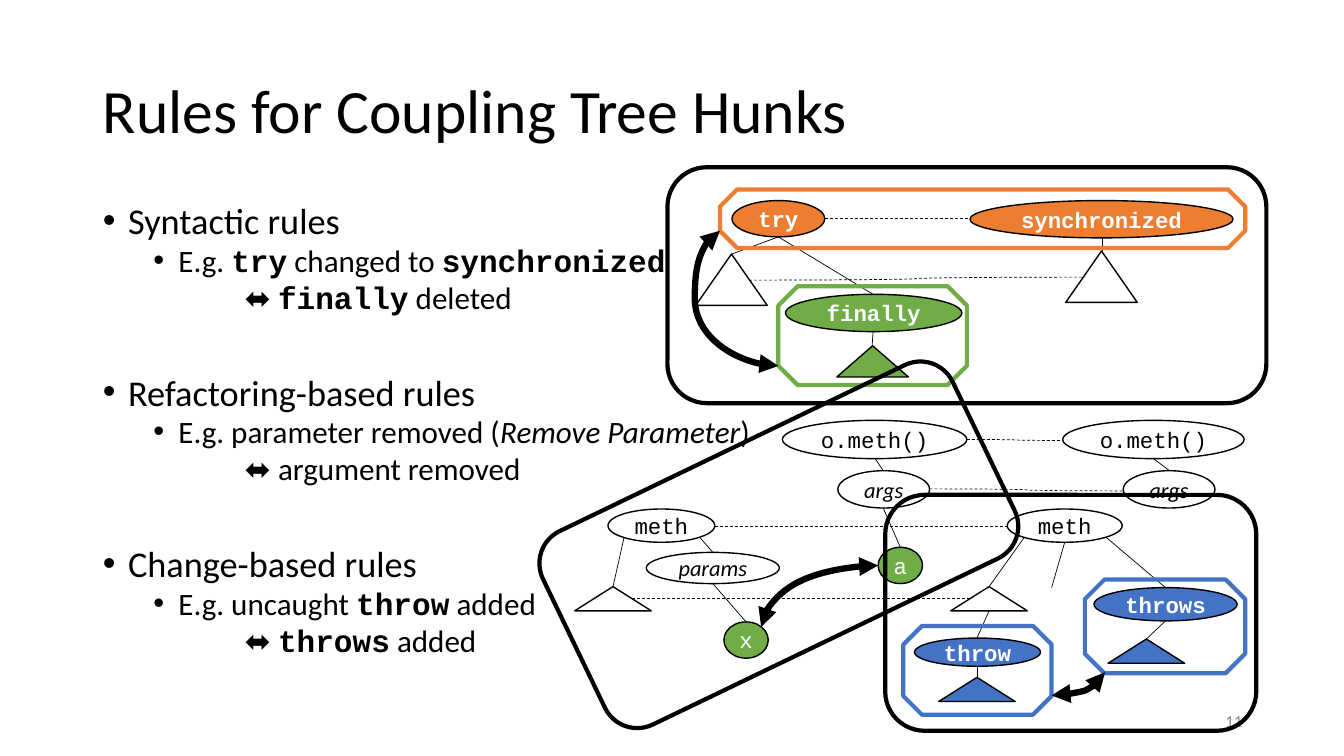
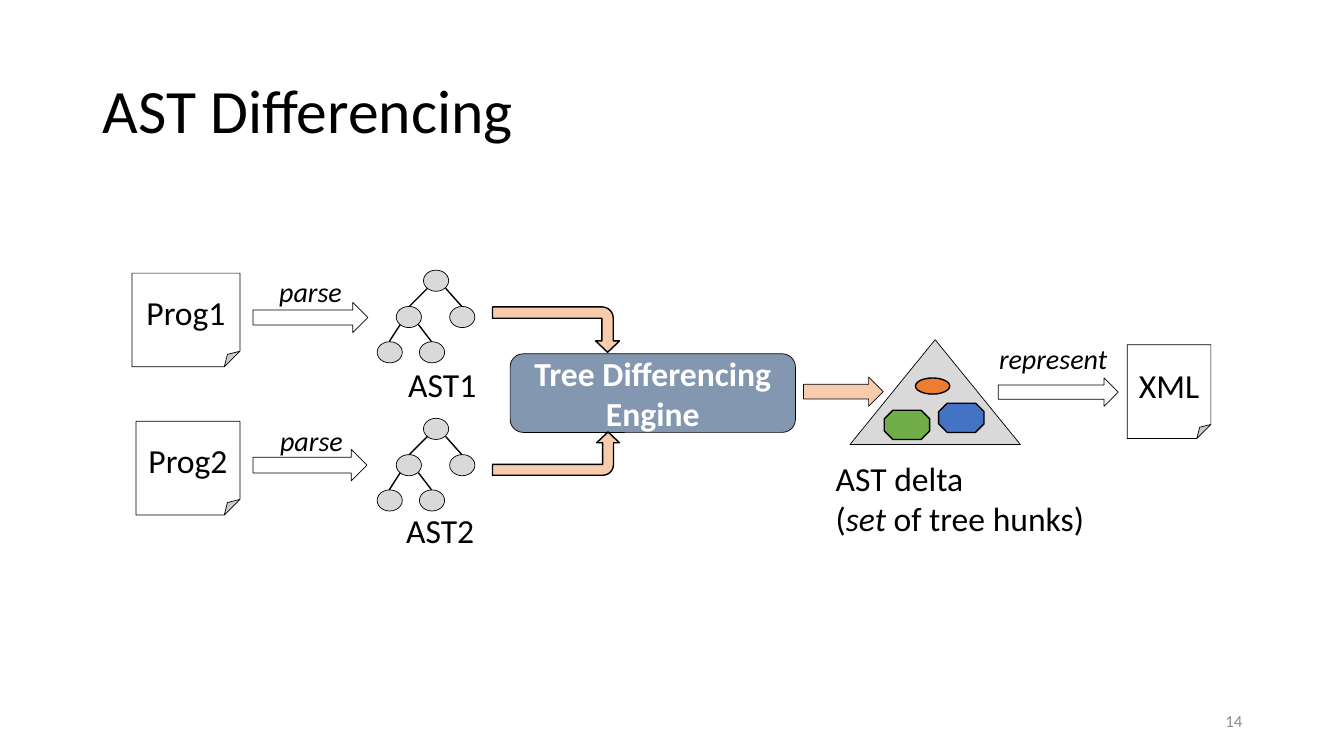
from dataclasses import dataclass

from lxml import etree
from pptx import Presentation
from pptx.dml.color import RGBColor
from pptx.enum.dml import MSO_LINE
from pptx.enum.shapes import MSO_CONNECTOR, MSO_SHAPE
from pptx.enum.text import MSO_ANCHOR, MSO_AUTO_SIZE, PP_ALIGN
from pptx.oxml.ns import qn
from pptx.util import Inches, Pt

ELLIPSE = MSO_SHAPE.OVAL
TRIANGLE = MSO_SHAPE.ISOSCELES_TRIANGLE
OCTAGON = MSO_SHAPE.OCTAGON
ROUNDED = MSO_SHAPE.ROUNDED_RECTANGLE
DOCUMENT = MSO_SHAPE.FOLDED_CORNER
ARROW = MSO_SHAPE.RIGHT_ARROW
BENT_ARROW = MSO_SHAPE.BENT_ARROW
STRAIGHT, CURVE = MSO_CONNECTOR.STRAIGHT, MSO_CONNECTOR.CURVE
DASH = MSO_LINE.DASH
LEFT, CENTER, RIGHT = PP_ALIGN.LEFT, PP_ALIGN.CENTER, PP_ALIGN.RIGHT
TOP, MIDDLE = MSO_ANCHOR.TOP, MSO_ANCHOR.MIDDLE
NO_AUTOFIT = MSO_AUTO_SIZE.NONE


@dataclass(frozen=True)
class Theme:
    """Colours, fonts, type sizes and line widths of the deck."""

    black: str = "000000"
    white: str = "FFFFFF"
    muted: str = "8C8C8C"
    orange: str = "ED7D31"
    green: str = "70AD47"
    blue: str = "4472C4"
    grey: str = "D9D9D9"
    slate: str = "8497B0"
    peach: str = "F8CBAD"
    sans: str = "Calibri"
    mono: str = "Courier New"
    title: float = 44
    item: float = 25.9
    subitem: float = 22.2
    label: float = 24
    caption: float = 20
    node: float = 16
    number: float = 12
    hair: float = 0.5
    thin: float = 1
    frame: float = 3
    heavy: float = 4.5


THEME = Theme()
CODE = {"font": THEME.mono, "bold": True}
ITALIC = {"italic": True}
KEYWORD = {**CODE, "color": THEME.white}
MONO = {"font": THEME.mono}
VARIABLE = {"font": THEME.mono, "color": THEME.white}

RULES = [
    ("Syntactic rules",
     ["E.g. ", ("try", CODE), " changed to ", ("synchronized", CODE)],
     ["⬌ ", ("finally", CODE), " deleted"]),
    ("Refactoring-based rules",
     ["E.g. parameter removed (", ("Remove Parameter", ITALIC), ")"],
     ["⬌ argument removed"]),
    ("Change-based rules",
     ["E.g. uncaught ", ("throw", CODE), " added"],
     ["⬌ ", ("throws", CODE), " added"]),
]
NODES = [
    ("try", (7.26, 1.99, 0.92, 0.36), THEME.orange, KEYWORD),
    ("synchronized", (9.62, 1.99, 2.61, 0.37), THEME.orange, KEYWORD),
    ("finally", (7.79, 2.92, 1.75, 0.37), THEME.green, KEYWORD),
    ("throws", (10.85, 5.83, 1.42, 0.33), THEME.blue, KEYWORD),
    ("throw", (9.07, 6.33, 1.25, 0.28), THEME.blue, KEYWORD),
    ("meth", (9.99, 5.05, 1.14, 0.33), THEME.white, MONO),
    ("meth", (6.03, 5.05, 1.06, 0.33), THEME.white, MONO),
    ("o.meth()", (10.54, 4.17, 1.8, 0.38), THEME.white, MONO),
    ("o.meth()", (7.76, 4.17, 1.83, 0.38), THEME.white, MONO),
    ("args", (8.31, 4.67, 0.91, 0.37), THEME.white, ITALIC),
    ("args", (11.14, 4.67, 0.91, 0.37), THEME.white, ITALIC),
    ("params", (6.41, 5.48, 1.32, 0.31), THEME.white, ITALIC),
]
SUBTREES = [
    ((6.9, 2.52, 0.71, 0.51), THEME.white),
    ((10.57, 2.49, 0.71, 0.51), THEME.white),
    ((8.3, 3.43, 0.71, 0.31), THEME.green),
    ((9.43, 5.82, 0.76, 0.24), THEME.white),
    ((5.7, 5.82, 0.76, 0.24), THEME.white),
    ((10.99, 6.34, 0.76, 0.24), THEME.blue),
    ((9.31, 6.72, 0.76, 0.24), THEME.blue),
]
EDGES = [
    (7.26, 2.52, 7.72, 2.35), (10.93, 2.49, 10.93, 2.36),
    (8.65, 3.43, 8.66, 3.28), (7.72, 2.35, 8.66, 2.92),
    (9.81, 5.82, 10.16, 5.33), (10.97, 5.33, 11.56, 5.83),
    (9.69, 6.33, 9.81, 6.06), (11.37, 6.34, 11.56, 6.16),
    (9.69, 6.72, 9.69, 6.62), (6.08, 5.82, 6.19, 5.33),
    (7.07, 5.48, 6.94, 5.33), (8.76, 4.67, 8.68, 4.55),
    (8.93, 5.43, 8.76, 5.04), (7.4, 6.17, 7.07, 5.79),
    (10.56, 5.38, 10.43, 5.83), (11.44, 4.55, 11.6, 4.67),
]
MATCHES = [
    (8.18, 2.17, 9.62, 2.17), (7.43, 2.78, 10.75, 2.75),
    (7.09, 5.22, 9.99, 5.22), (6.27, 5.94, 9.62, 5.94),
    (9.59, 4.36, 10.54, 4.37), (9.22, 4.85, 11.14, 4.87),
]
TREE_NODES = [(0.46, 0), (0.19, 0.36), (0.72, 0.36), (0, 0.71), (0.42, 0.71)]
TREE_EDGES = [
    (0.5, 0.18, 0.32, 0.36), (0.23, 0.54, 0.12, 0.71),
    (0.68, 0.18, 0.84, 0.36), (0.41, 0.54, 0.54, 0.71),
]


def inches(values):
    """Turn plain numbers into lengths."""
    return [Inches(value) for value in values]


def add_span(para, text, size=THEME.label, font=THEME.sans, color=THEME.black,
             bold=False, italic=False):
    """Add one formatted piece of text to a paragraph."""
    span = para.add_run()
    span.text = text
    span.font.size = Pt(size)
    span.font.name = font
    span.font.color.rgb = RGBColor.from_string(color)
    span.font.bold = bold
    span.font.italic = italic


def add_spans(para, pieces, **style):
    """Add plain strings and (text, style) pairs to a paragraph."""
    for piece in pieces:
        text, changes = (piece, {}) if isinstance(piece, str) else piece
        add_span(para, text, **{**style, **changes})


def write(box, lines, align=LEFT, anchor=TOP, wrap=False, **style):
    """Fill a box with one paragraph for each list of pieces."""
    frame = box.text_frame
    frame.word_wrap = wrap
    frame.auto_size = NO_AUTOFIT
    frame.vertical_anchor = anchor
    for index, pieces in enumerate(lines):
        para = frame.paragraphs[0] if index == 0 else frame.add_paragraph()
        para.alignment = align
        add_spans(para, pieces, **style)


def place(box, at):
    """Move a placeholder to its position and size."""
    box.left, box.top, box.width, box.height = inches(at)


def add_label(page, lines, at, **style):
    """Add a text box."""
    write(page.shapes.add_textbox(*inches(at)), lines, **style)


def add_figure(page, kind, at, fill=None, line=THEME.black, weight=THEME.thin,
               adjust=(), rotation=0, flip=False):
    """Add a preset shape, unfilled unless a fill is given."""
    shape = page.shapes.add_shape(kind, *inches(at))
    shape.shadow.inherit = False
    if fill:
        shape.fill.solid()
        shape.fill.fore_color.rgb = RGBColor.from_string(fill)
    else:
        shape.fill.background()
    shape.line.color.rgb = RGBColor.from_string(line)
    shape.line.width = Pt(weight)
    for index, value in enumerate(adjust):
        shape.adjustments[index] = value
    shape.rotation = rotation
    if flip:
        shape.element.spPr.xfrm.set("flipH", "1")
    return shape


def add_node(page, text, at, fill, style):
    """Add a labelled ellipse of a syntax tree."""
    node = add_figure(page, ELLIPSE, at, fill)
    write(node, [[text]], CENTER, MIDDLE, size=THEME.node, **style)
    return node


def add_line(page, ends, kind=STRAIGHT, weight=THEME.hair, dash=None):
    """Add a black connector between two points."""
    line = page.shapes.add_connector(kind, *inches(ends))
    line.line.color.rgb = RGBColor.from_string(THEME.black)
    line.line.width = Pt(weight)
    if dash:
        line.line.dash_style = dash
    etree.SubElement(line.element.spPr, qn("a:effectLst"))
    return line


def add_coupling(page, ends, start, finish, preset, bend=None):
    """Add a heavy two-headed curve glued to (shape, site) pairs."""
    curve = add_line(page, ends, CURVE, THEME.heavy)
    properties = curve.element.spPr
    for tag in ("a:headEnd", "a:tailEnd"):
        etree.SubElement(properties.find(qn("a:ln")), qn(tag), type="triangle")
    geometry = properties.find(qn("a:prstGeom"))
    geometry.set("prst", preset)
    if bend:
        etree.SubElement(geometry.find(qn("a:avLst")), qn("a:gd"),
                         name="adj1", fmla=f"val {bend}")
    joints = curve.element.nvCxnSpPr.cNvCxnSpPr
    for tag, (shape, site) in (("a:stCxn", start), ("a:endCxn", finish)):
        etree.SubElement(joints, qn(tag), id=str(shape.shape_id), idx=str(site))


def add_item(para, pieces, margin, size, before, bullet=True):
    """Format one paragraph of the rules list."""
    properties = para._p.get_or_add_pPr()
    properties.set("marL", str(Inches(margin)))
    properties.set("indent", str(Inches(-0.25 if bullet else 0)))
    if bullet:
        etree.SubElement(properties, qn("a:buFont"), typeface="Arial")
        etree.SubElement(properties, qn("a:buChar"), char="•")
    else:
        etree.SubElement(properties, qn("a:buNone"))
    para.line_spacing = 0.8
    para.space_before = Pt(before)
    add_spans(para, pieces, size=size)


def add_rules(body):
    """Fill the body placeholder with the three kinds of rules."""
    place(body, (0.92, 2, 11.5, 4.76))
    frame = body.text_frame
    frame.auto_size = NO_AUTOFIT
    for index, (heading, example, effect) in enumerate(RULES):
        para = frame.add_paragraph() if index else frame.paragraphs[0]
        add_item(para, [heading], 0.25, THEME.item, 45 if index else 0)
        for pieces, margin, bullet in ((example, 0.75, True), (effect, 1.41, False)):
            para = frame.add_paragraph()
            para.level = 1
            add_item(para, pieces, margin, THEME.subitem, 5, bullet)


def add_page(deck, layout, title, number):
    """Add a slide with its title and page number."""
    page = deck.slides.add_slide(deck.slide_layouts.get_by_name(layout))
    heading = page.shapes.title
    place(heading, (0.92, 0.4, 11.5, 1.45))
    write(heading, [[title]], anchor=MIDDLE, wrap=True, size=THEME.title)
    heading.text_frame.paragraphs[0].line_spacing = 0.9
    add_label(page, [[number]], (9.42, 6.95, 3, 0.4), align=RIGHT, anchor=MIDDLE,
              wrap=True, size=THEME.number, color=THEME.muted)
    return page


def add_hunk(page, at, color, adjust=()):
    """Add the coloured octagon around a tree hunk."""
    return add_figure(page, OCTAGON, at, line=color, weight=THEME.frame, adjust=adjust)


def build_rules(deck):
    """Build the slide on coupling rules."""
    page = add_page(deck, "Title and Content", "Rules for Coupling Tree Hunks", "11")
    add_rules(page.placeholders[1])
    for node in NODES:
        add_node(page, *node)
    parameter = add_node(page, "x", (7.18, 6.17, 0.44, 0.36), THEME.green, VARIABLE)
    argument = add_node(page, "a", (8.71, 5.43, 0.44, 0.36), THEME.green, VARIABLE)
    for at, fill in SUBTREES:
        add_figure(page, TRIANGLE, at, fill)
    for ends in EDGES:
        add_line(page, ends)
    for ends in MATCHES:
        add_line(page, ends, CURVE, dash=DASH)
    deleted = add_hunk(page, (7.72, 2.84, 1.87, 0.98), THEME.green, [0.195])
    changed = add_hunk(page, (7.14, 1.88, 5.21, 0.58), THEME.orange)
    declared = add_hunk(page, (10.76, 5.75, 1.59, 0.93), THEME.blue, [0.209])
    thrown = add_hunk(page, (8.96, 6.21, 1.47, 0.88), THEME.blue, [0.209])
    add_coupling(page, (7.72, 3.63, 7.14, 2.29), (deleted, 4), (changed, 4),
                 "curvedConnector3", 143000)
    add_coupling(page, (10.43, 6.9, 10.96, 6.67), (thrown, 1), (declared, 3),
                 "curvedConnector2")
    add_coupling(page, (8.71, 5.61, 7.55, 6.22), (argument, 2), (parameter, 7),
                 "curvedConnector2")
    for at, rotation in (((6.62, 1.66, 5.94, 2.34), 0),
                         ((5.47, 4.34, 4.51, 2.13), 334.3),
                         ((8.78, 4.91, 3.68, 2.34), 0)):
        add_figure(page, ROUNDED, at, weight=THEME.frame, rotation=rotation)


def add_tree(page, left, top):
    """Add a small syntax tree."""
    for x, y in TREE_NODES:
        add_figure(page, ELLIPSE, (left + x, top + y, 0.25, 0.21), THEME.grey,
                   weight=THEME.hair)
    for x1, y1, x2, y2 in TREE_EDGES:
        add_line(page, (left + x1, top + y1, left + x2, top + y2), weight=THEME.thin)


def build_differencing(deck):
    """Build the slide on the differencing pipeline."""
    page = add_page(deck, "Title Only", "AST Differencing", "14")
    for text, at in (("Prog1", (1.31, 2.71, 1.07, 0.93)),
                     ("Prog2", (1.35, 4.18, 1.03, 0.93)),
                     ("XML", (11.18, 3.42, 0.83, 0.93))):
        document = add_figure(page, DOCUMENT, at, THEME.white, weight=THEME.hair)
        write(document, [[text]], CENTER, MIDDLE)
    engine = add_figure(page, ROUNDED, (5.06, 3.51, 2.83, 0.78), THEME.slate,
                        weight=THEME.hair)
    write(engine, [["Tree Differencing"], ["Engine"]], CENTER, MIDDLE,
          color=THEME.white, bold=True)
    for top in (2.68, 4.15):
        add_tree(page, 3.74, top)
    for at, flip in (((5.29, 2.64, 0.45, 1.26), False), ((5.3, 3.87, 0.43, 1.26), True)):
        add_figure(page, BENT_ARROW, at, THEME.peach, rotation=90, flip=flip,
                   adjust=[0.25, 0.264, 0.25, 0.247])
    for at, fill in (((2.51, 3, 1.14, 0.3), THEME.white),
                     ((2.51, 4.46, 1.13, 0.31), THEME.white),
                     ((7.97, 3.74, 0.79, 0.29), THEME.peach),
                     ((9.9, 3.75, 1.19, 0.28), THEME.white)):
        add_figure(page, ARROW, at, fill, weight=THEME.hair)
    add_figure(page, TRIANGLE, (8.43, 3.37, 1.69, 1.04), THEME.grey, weight=THEME.hair)
    for kind, at, fill in ((OCTAGON, (8.77, 4.07, 0.45, 0.29), THEME.green),
                           (OCTAGON, (9.31, 4, 0.45, 0.29), THEME.blue),
                           (ELLIPSE, (9.08, 3.75, 0.34, 0.16), THEME.orange)):
        add_figure(page, kind, at, fill)
    add_label(page, [["AST1"]], (3.95, 3.56, 0.88, 0.5))
    add_label(page, [["AST2"]], (3.93, 5.01, 0.88, 0.5))
    add_label(page, [["AST delta"], ["(", ("set", ITALIC), " of tree hunks)"]],
              (8.19, 4.49, 2.7, 0.91))
    for text, at in (("parse", (2.67, 2.67, 0.83, 0.44)),
                     ("parse", (2.68, 4.15, 0.83, 0.44)),
                     ("represent", (9.81, 3.34, 1.28, 0.44))):
        add_label(page, [[text]], at, size=THEME.caption, italic=True)


def main():
    """Build and save the deck."""
    deck = Presentation()
    deck.slide_width, deck.slide_height = inches((13.33, 7.5))
    build_rules(deck)
    build_differencing(deck)
    deck.save("out.pptx")


if __name__ == "__main__":
    main()
